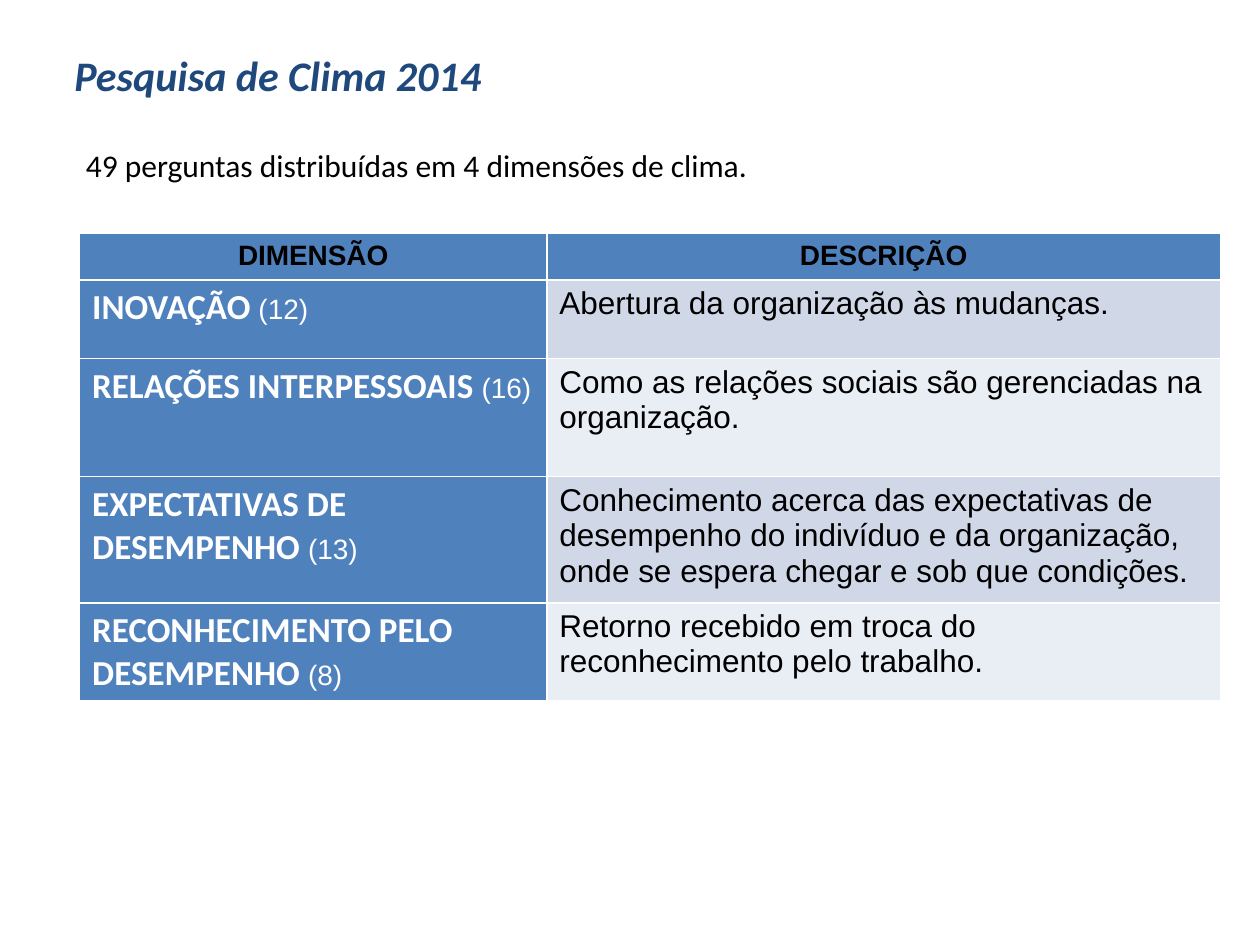
"""Build the slide on the four dimensions of the 2014 climate survey."""
from pptx import Presentation
from pptx.dml.color import RGBColor
from pptx.enum.text import MSO_ANCHOR, PP_ALIGN
from pptx.util import Pt

COLORS = {
    "title": "1F497D",
    "text": "000000",
    "light": "FFFFFF",
    "header": "4F81BD",
    "band_dark": "D0D8E8",
    "band_light": "E9EDF4",
}
HEADINGS = ["DIMENSÃO", "DESCRIÇÃO"]
DIMENSIONS = [
    ("INOVAÇÃO", 12, "Abertura da organização às mudanças."),
    ("RELAÇÕES INTERPESSOAIS", 16,
     "Como as relações sociais são gerenciadas na organização."),
    ("EXPECTATIVAS DE DESEMPENHO", 13,
     "Conhecimento acerca das expectativas de desempenho do indivíduo e da "
     "organização, onde se espera chegar e sob que condições."),
    ("RECONHECIMENTO PELO DESEMPENHO", 8,
     "Retorno recebido em troca do reconhecimento pelo trabalho."),
]
COLUMN_WIDTHS = [267, 385]
ROW_HEIGHTS = [26, 45, 67.5, 67.5, 56]


def add_run(paragraph, text, size, font, color, bold=False, italic=False):
    run = paragraph.add_run()
    run.text = text
    run.font.size = Pt(size)
    run.font.name = font
    run.font.bold = bold
    run.font.italic = italic
    run.font.color.rgb = RGBColor.from_string(COLORS[color])


def fill_cell(cell, color):
    cell.fill.solid()
    cell.fill.fore_color.rgb = RGBColor.from_string(COLORS[color])
    return cell.text_frame.paragraphs[0]


prs = Presentation()
prs.slide_width, prs.slide_height = Pt(720), Pt(540)
slide = prs.slides.add_slide(prs.slide_layouts[5])

title = slide.shapes.title
title.left, title.top, title.width, title.height = Pt(42.5), Pt(26), Pt(635), Pt(33)
heading = title.text_frame
heading.margin_left = heading.margin_right = 0
heading.margin_top = heading.margin_bottom = 0
heading.vertical_anchor = MSO_ANCHOR.MIDDLE
heading.paragraphs[0].alignment = PP_ALIGN.LEFT
add_run(heading.paragraphs[0], "Pesquisa de Clima 2014", 24, "Calibri", "title", True, True)

intro = slide.shapes.add_textbox(Pt(42), Pt(80), Pt(636), Pt(28)).text_frame
intro.word_wrap = True
intro.paragraphs[0].alignment = PP_ALIGN.JUSTIFY
add_run(intro.paragraphs[0], "49 perguntas distribuídas em 4 dimensões de clima.",
        18, "Calibri", "text")

dimensions = slide.shapes.add_table(
    len(ROW_HEIGHTS), len(COLUMN_WIDTHS), Pt(45.5), Pt(133.5),
    Pt(sum(COLUMN_WIDTHS)), Pt(sum(ROW_HEIGHTS))).table
for column, width in zip(dimensions.columns, COLUMN_WIDTHS):
    column.width = Pt(width)
for row, height in zip(dimensions.rows, ROW_HEIGHTS):
    row.height = Pt(height)

for index, label in enumerate(HEADINGS):
    paragraph = fill_cell(dimensions.cell(0, index), "header")
    paragraph.alignment = PP_ALIGN.CENTER
    add_run(paragraph, label, 16, "Arial", "text", True)

for index, (name, questions, description) in enumerate(DIMENSIONS, 1):
    paragraph = fill_cell(dimensions.cell(index, 0), "header")
    add_run(paragraph, f"{name} ", 20, "Calibri", "light", True)
    add_run(paragraph, f"({questions})", 16, "Arial", "light")
    band = "band_dark" if index % 2 else "band_light"
    paragraph = fill_cell(dimensions.cell(index, 1), band)
    add_run(paragraph, description, 18, "Arial", "text")

prs.save("out.pptx")
